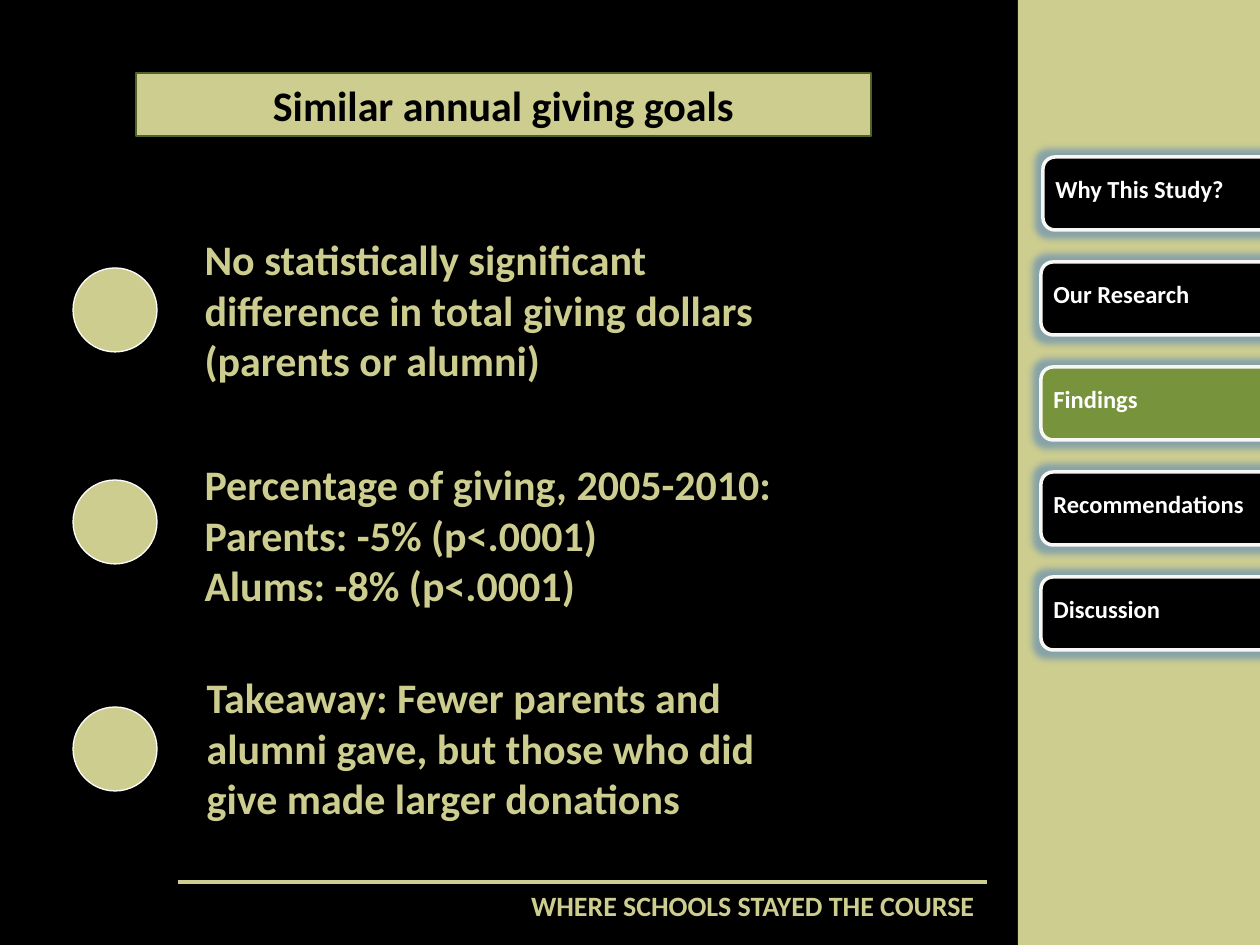
"""Build the annual giving findings slide with its section navigation."""
from lxml import etree
from pptx import Presentation
from pptx.dml.color import RGBColor
from pptx.enum import shapes, text
from pptx.oxml import ns
from pptx.util import Emu, Pt

PX = 914400 // 126
SAND, BLACK, WHITE, GREEN = "CDCD8F", "000000", "FFFFFF", "77933C"
LEFT, CENTER, RIGHT = (text.PP_ALIGN.LEFT, text.PP_ALIGN.CENTER,
                       text.PP_ALIGN.RIGHT)
TOP, MIDDLE = text.MSO_ANCHOR.TOP, text.MSO_ANCHOR.MIDDLE


def rgb(value):
    return RGBColor.from_string(value)


def px(*values):
    return [Emu(v * PX) for v in values]


def child(parent, tag, **attrs):
    return etree.SubElement(parent, ns.qn(tag), attrs)


class Deck:
    def __init__(self):
        self.prs = Presentation()
        self.prs.slide_width, self.prs.slide_height = px(1260, 945)
        self.slide = self.prs.slides.add_slide(self.prs.slide_layouts[4])
        fill = self.slide.background.fill
        fill.solid()
        fill.fore_color.rgb = rgb(BLACK)

    def paint(self, sp, fill, line=None, width=0.75):
        sp.fill.solid()
        sp.fill.fore_color.rgb = rgb(fill)
        if line:
            sp.line.color.rgb = rgb(line)
            sp.line.width = Pt(width)
        else:
            sp.line.fill.background()

    def set_text(self, sp, lines, size, color, align=LEFT, anchor=TOP):
        tf = sp.text_frame
        tf.text = "\n".join(lines)
        frame = {"word_wrap": True, "vertical_anchor": anchor,
                 "auto_size": text.MSO_AUTO_SIZE.NONE}
        for name, value in frame.items():
            setattr(tf, name, value)
        para = {"alignment": align, "space_before": Pt(0), "line_spacing": 1.0}
        font = {"name": "Calibri", "size": Pt(size), "bold": True}
        for p in tf.paragraphs:
            for name, value in para.items():
                setattr(p, name, value)
            for r in p.runs:
                for name, value in font.items():
                    setattr(r.font, name, value)
                r.font.color.rgb = rgb(color)

    def placeholder(self, idx, box, lines, color, align=LEFT):
        sp = self.slide.placeholders[idx]
        sp.left, sp.top, sp.width, sp.height = px(*box)
        self.set_text(sp, lines, 24, color, align, MIDDLE)
        for p in sp.text_frame.paragraphs:
            pr = p._p.get_or_add_pPr()
            pr.set("marL", "0")
            pr.set("indent", "0")
            child(pr, "a:buNone")
        return sp

    def remove(self, idx):
        el = self.slide.placeholders[idx]._element
        el.getparent().remove(el)

    def label(self, box, line, size, color, align=LEFT):
        sp = self.slide.shapes.add_textbox(*px(*box))
        self.set_text(sp, [line], size, color, align)

    def shape(self, kind, box, fill, line=None, width=0.75):
        sp = self.slide.shapes.add_shape(kind, *px(*box))
        sp.shadow.inherit = False
        self.paint(sp, fill, line, width)
        return sp

    def button(self, box, fill):
        sp = self.shape(shapes.MSO_SHAPE.ROUNDED_RECTANGLE, box, fill,
                        "F8F7F3", 2)
        effects = sp._element.spPr.find(ns.qn("a:effectLst"))
        glow = child(effects, "a:glow", rad="101600")
        color = child(glow, "a:srgbClr", val="4F81BD")
        child(color, "a:alpha", val="55000")

    def rule(self, ends, color, width):
        ln = self.slide.shapes.add_connector(shapes.MSO_CONNECTOR.STRAIGHT,
                                             *px(*ends))
        ln.line.color.rgb = rgb(color)
        ln.line.width = Pt(width)
        child(ln._element.spPr, "a:effectLst")


def main():
    deck = Deck()
    title = deck.placeholder(0, (136, 73, 735, 63),
                             ["Similar annual giving goals"], BLACK, CENTER)
    deck.paint(title, SAND, "4F6228")

    points = [
        (192, 227, 268, ["No statistically significant difference in total "
                         "giving dollars (parents or alumni)"]),
        (192, 452, 480, ["Percentage of giving, 2005-2010:",
                         "Parents: -5% (p<.0001)",
                         "Alums: -8% (p<.0001)"]),
        (194, 665, 707, ["Takeaway: Fewer parents and alumni gave, but those "
                         "who did give made larger donations"]),
    ]
    for idx, (left, top, dot_top, lines) in enumerate(points, 1):
        deck.placeholder(idx, (left, top, 620, 165), lines, SAND)
        deck.shape(shapes.MSO_SHAPE.OVAL, (73, dot_top, 84, 84), SAND, WHITE)
    deck.remove(4)

    deck.rule((987, 882, 178, 882), SAND, 2)
    deck.label((462, 882, 525, 47), "WHERE SCHOOLS STAYED THE COURSE", 16,
               SAND, RIGHT)

    deck.shape(shapes.MSO_SHAPE.RECTANGLE, (1018, 0, 242, 945), SAND)
    sections = ["Why This Study?", "Our Research", "Findings",
                "Recommendations", "Discussion"]
    for i, name in enumerate(sections):
        left, top = 1041 if i else 1043, 157 + 105 * i
        deck.button((left, top, 242, 73),
                    GREEN if name == "Findings" else BLACK)
        deck.label((left, top + 11, 220, 43), name, 14, WHITE)

    deck.prs.save("out.pptx")


if __name__ == "__main__":
    main()
